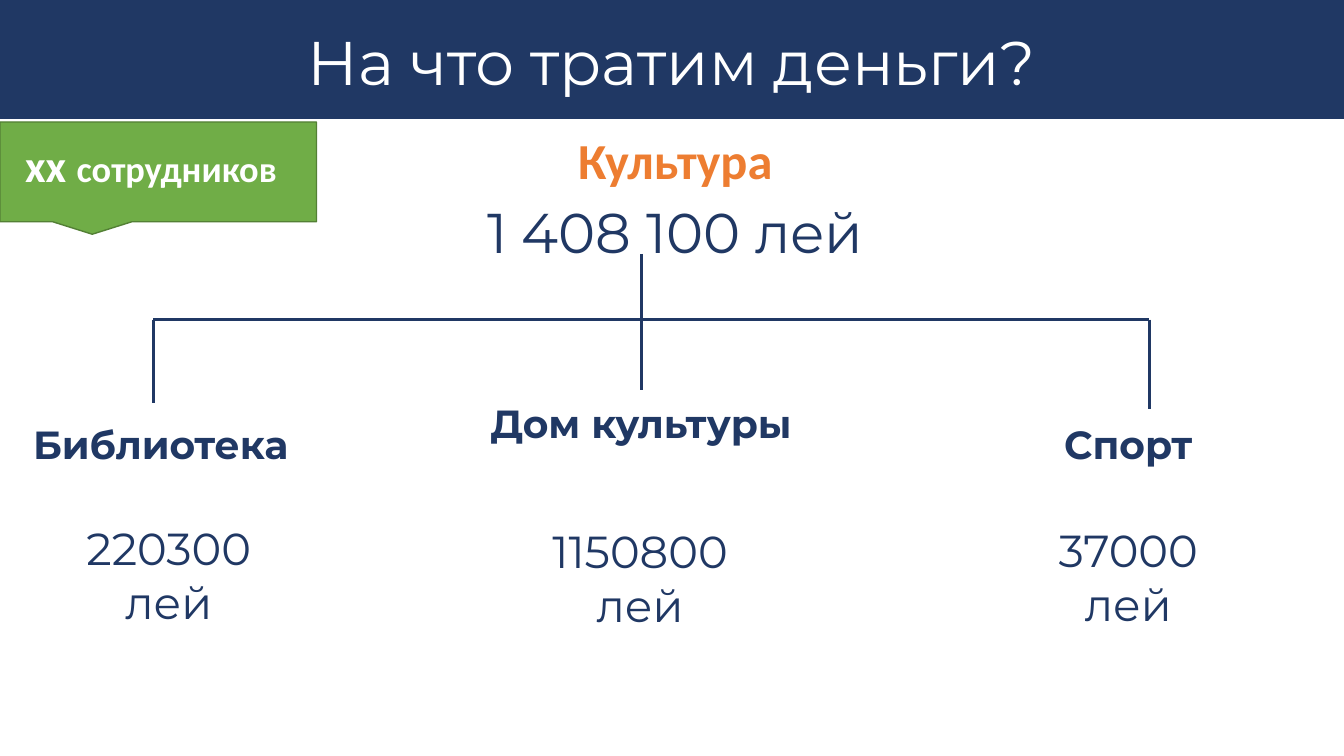
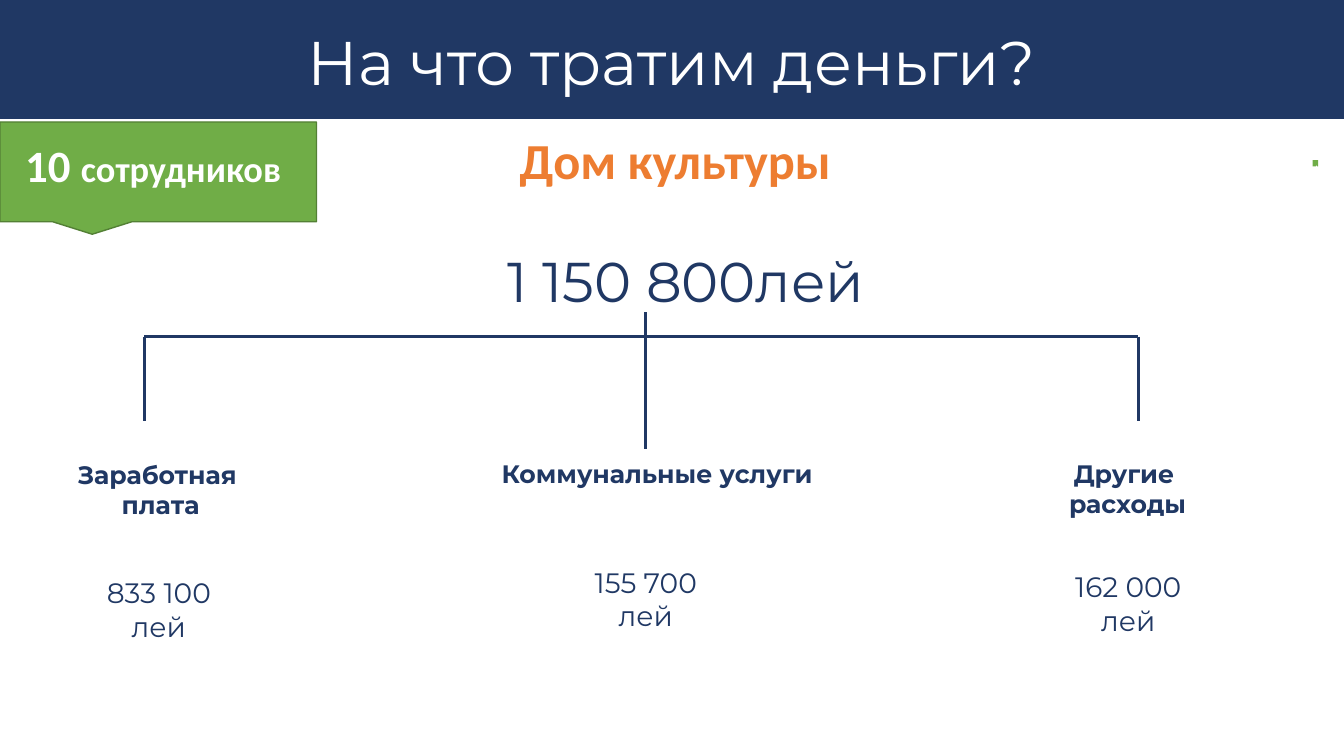
from dataclasses import dataclass

from lxml import etree
from pptx import Presentation
from pptx import util as u
from pptx.dml.color import RGBColor
from pptx.enum import shapes, text
from pptx.oxml.ns import qn

NAVY, WHITE, ORANGE = "203864", "FFFFFF", "ED7D31"
GREEN, DARK_GREEN = "70AD47", "538035"
BODY_FONT, ACCENT_FONT = "Montserrat", "Calibri"


@dataclass
class Box:
    """A rectangle in inches whose regions are given in percent of its size."""
    left: float
    top: float
    width: float
    height: float

    def x(self, share):
        """Return the horizontal position at a percentage of the width."""
        return self.left + self.width * share / 100

    def y(self, share):
        """Return the vertical position at a percentage of the height."""
        return self.top + self.height * share / 100

    def region(self, left, top, width, height):
        """Return the box that covers the given percentages."""
        return Box(self.x(left), self.y(top),
                   self.width * width / 100, self.height * height / 100)

    def emu(self):
        """Return left, top, width and height as lengths."""
        return [u.Inches(v) for v in (self.left, self.top, self.width, self.height)]


@dataclass
class Branch:
    """One arm of the budget tree, in percent of the tree's box."""
    stem: float
    stem_end: float
    label: str
    label_place: tuple
    amount: str
    amount_place: tuple


SLIDE = Box(0, 0, 13.33, 7.5)
BAND = SLIDE.region(0, 0, 100, 15.73)
TITLE = SLIDE.region(1.25, 3.33, 97.5, 10.8)
BADGE = SLIDE.region(0, 16.13, 23.55, 13.2)
SUBJECT = SLIDE.region(1.75, 16.4, 97, 9.5)
TREE = SLIDE.region(0, 33.33, 100, 53.33)
MARK = SLIDE.region(97.67, 21.2, 0.4, 0.8)


def rgb(value):
    """Turn a hex string into a colour."""
    return RGBColor.from_string(value)


def style(span, size, color, font=BODY_FONT, bold=False):
    """Format a run of text."""
    span.font.size, span.font.name, span.font.bold = u.Pt(size), font, bold
    span.font.color.rgb = rgb(color)


def add_panel(page, kind, box, fill, line=None):
    """Add a filled preset shape."""
    panel = page.shapes.add_shape(kind, *box.emu())
    panel.shadow.inherit = False
    panel.fill.solid()
    panel.fill.fore_color.rgb = rgb(fill)
    if line:
        panel.line.color.rgb = rgb(line)
        panel.line.width = u.Pt(1)
    else:
        panel.line.fill.background()
    return panel


def add_line(page, x1, y1, x2, y2):
    """Add one line of the tree."""
    line = page.shapes.add_connector(shapes.MSO_CONNECTOR.STRAIGHT,
                                     *map(u.Inches, (x1, y1, x2, y2)))
    line.line.color.rgb = rgb(NAVY)
    line.line.width = u.Pt(2.25)
    etree.SubElement(line.element.spPr, qn("a:effectLst"))


def add_text(page, box, words, size, color=NAVY, font=BODY_FONT, bold=False):
    """Add centred text in a wrapping box."""
    frame = page.shapes.add_textbox(*box.emu()).text_frame
    frame.word_wrap = True
    frame.auto_size = text.MSO_AUTO_SIZE.SHAPE_TO_FIT_TEXT
    frame.text = words
    for para in frame.paragraphs:
        para.alignment = text.PP_ALIGN.CENTER
        style(para.runs[0], size, color, font, bold)


def add_centred(page, area, place, words, size, bold=False):
    """Add text around a centre, with a height that follows its lines."""
    centre, top, width = place
    box = area.region(centre - width / 2, top, width, 0)
    box.height = 0.1 + (words.count("\n") + 1) * size * 1.2 / 72
    add_text(page, box, words, size, bold=bold)


def add_header(page, title_text):
    """Place the band and the slide title over it."""
    band = add_panel(page, shapes.MSO_SHAPE.RECTANGLE, BAND, NAVY)
    title = page.shapes.title
    title.element.addprevious(band.element)
    title.left, title.top, title.width, title.height = TITLE.emu()
    frame = title.text_frame
    frame.text = title_text
    frame.auto_size = text.MSO_AUTO_SIZE.NONE
    frame.vertical_anchor = text.MSO_ANCHOR.MIDDLE
    para = frame.paragraphs[0]
    para.alignment = text.PP_ALIGN.CENTER
    para.line_spacing = 0.9
    style(para.runs[0], 44, WHITE)


def add_badge(page, box, count):
    """Place the callout with the number of employees."""
    badge = add_panel(page, shapes.MSO_SHAPE.RECTANGULAR_CALLOUT, box, GREEN, DARK_GREEN)
    frame = badge.text_frame
    frame.word_wrap = True
    frame.vertical_anchor = text.MSO_ANCHOR.MIDDLE
    frame.margin_left, frame.margin_right = u.Inches(0.25), 0
    frame.margin_top, frame.margin_bottom = 0, u.Inches(0.15)
    para = frame.paragraphs[0]
    para.alignment = text.PP_ALIGN.LEFT
    for words, size in ((count + " ", 32), ("сотрудников", 26)):
        span = para.add_run()
        span.text = words
        style(span, size, WHITE, ACCENT_FONT, True)


def add_tree(page, box, trunk, bar, branches, label_size, amount_size):
    """Draw the trunk, the bar and the branches with their texts."""
    trunk_x, trunk_top = trunk
    bar_y = box.y(bar)
    add_line(page, box.x(trunk_x), box.y(trunk_top), box.x(trunk_x), bar_y)
    add_line(page, box.x(branches[0].stem), bar_y, box.x(branches[-1].stem), bar_y)
    for branch in branches:
        stem = box.x(branch.stem)
        add_line(page, stem, bar_y, stem, box.y(branch.stem_end))
        add_centred(page, box, branch.label_place, branch.label, label_size, True)
        add_centred(page, box, branch.amount_place, branch.amount + "\nлей", amount_size)


def add_budget_page(deck, subject, staff, total, total_place, **tree):
    """Add a slide that splits one total into branches."""
    page = deck.slides.add_slide(deck.slide_layouts[5])
    add_header(page, "На что тратим деньги?")
    add_text(page, SUBJECT, subject, 36, ORANGE, ACCENT_FONT, True)
    add_centred(page, SLIDE, total_place, total, 40)
    add_tree(page, TREE, **tree)
    add_badge(page, BADGE, staff)
    return page


def main():
    """Build and save the deck."""
    deck = Presentation()
    deck.slide_width, deck.slide_height = u.Inches(SLIDE.width), u.Inches(SLIDE.height)

    add_budget_page(
        deck, "Культура", "xx", "1 408 100 лей", (50.25, 25.47, 52.5),
        trunk=(47.7, 0.5), bar=16.75, label_size=28, amount_size=32,
        branches=[
            Branch(11.4, 37.5, "Библиотека", (11.95, 40.5, 21.3),
                   "220300", (12.56, 65.5, 22.9)),
            Branch(47.7, 34.25, "Дом культуры", (47.7, 35.25, 24.2),
                   "1150800", (47.63, 66.25, 28)),
            Branch(85.5, 39, "Спорт", (83.95, 40.5, 24.2),
                   "37000", (83.95, 66, 28)),
        ])

    page = add_budget_page(
        deck, "Дом культуры", "10", "1 150 800лей", (51.05, 32, 84.7),
        trunk=(48, 15), bar=21, label_size=18, amount_size=20,
        branches=[
            Branch(10.73, 42, "Заработная \nплата", (11.96, 50.25, 25.7),
                   "833 100", (11.82, 79, 19.1)),
            Branch(48, 48.75, "Коммунальные услуги", (48.9, 50, 30.3),
                   "155 700", (48.05, 76.5, 28.6)),
            Branch(84.7, 42, "Другие \nрасходы", (83.9, 50, 21.8),
                   "162 000", (83.95, 77.5, 15.6)),
        ])
    mark = add_panel(page, shapes.MSO_SHAPE.RECTANGULAR_CALLOUT, MARK, GREEN)
    mark.adjustments[0], mark.adjustments[1] = 0.15, 0.27

    deck.save("out.pptx")


if __name__ == "__main__":
    main()
